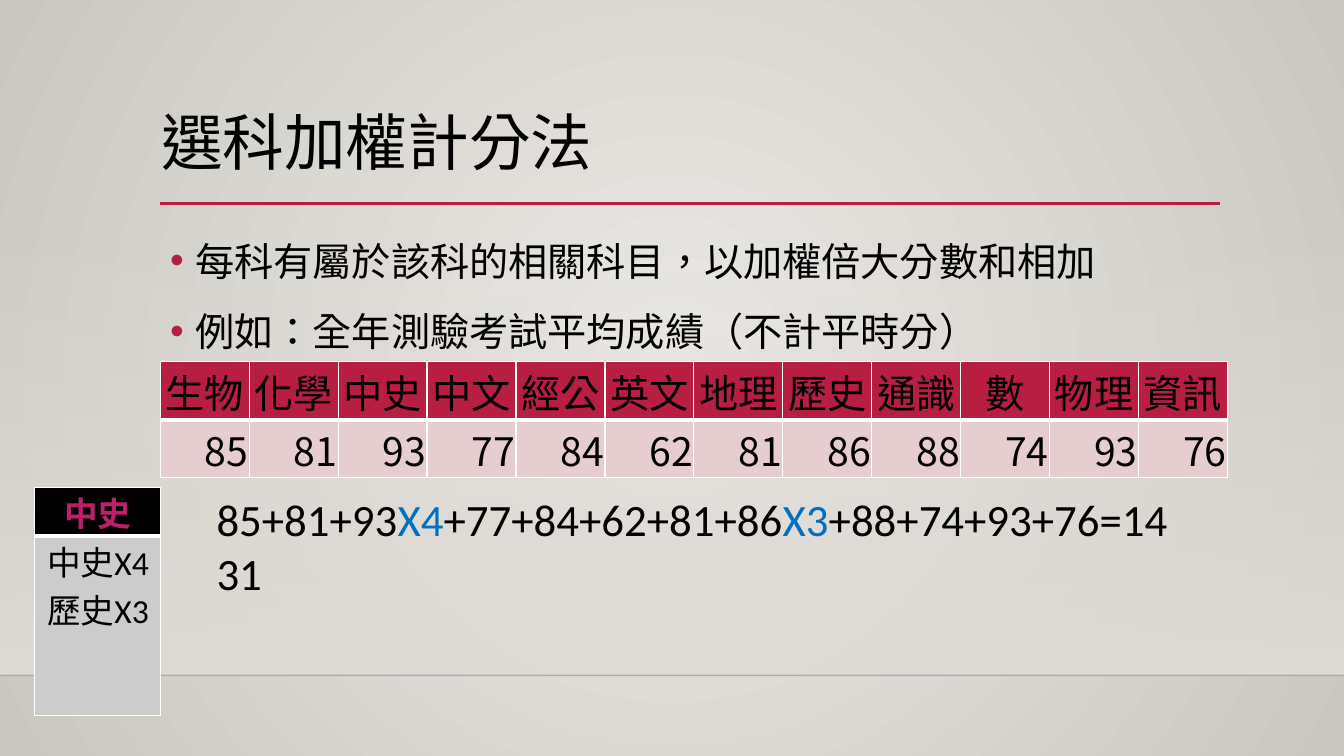
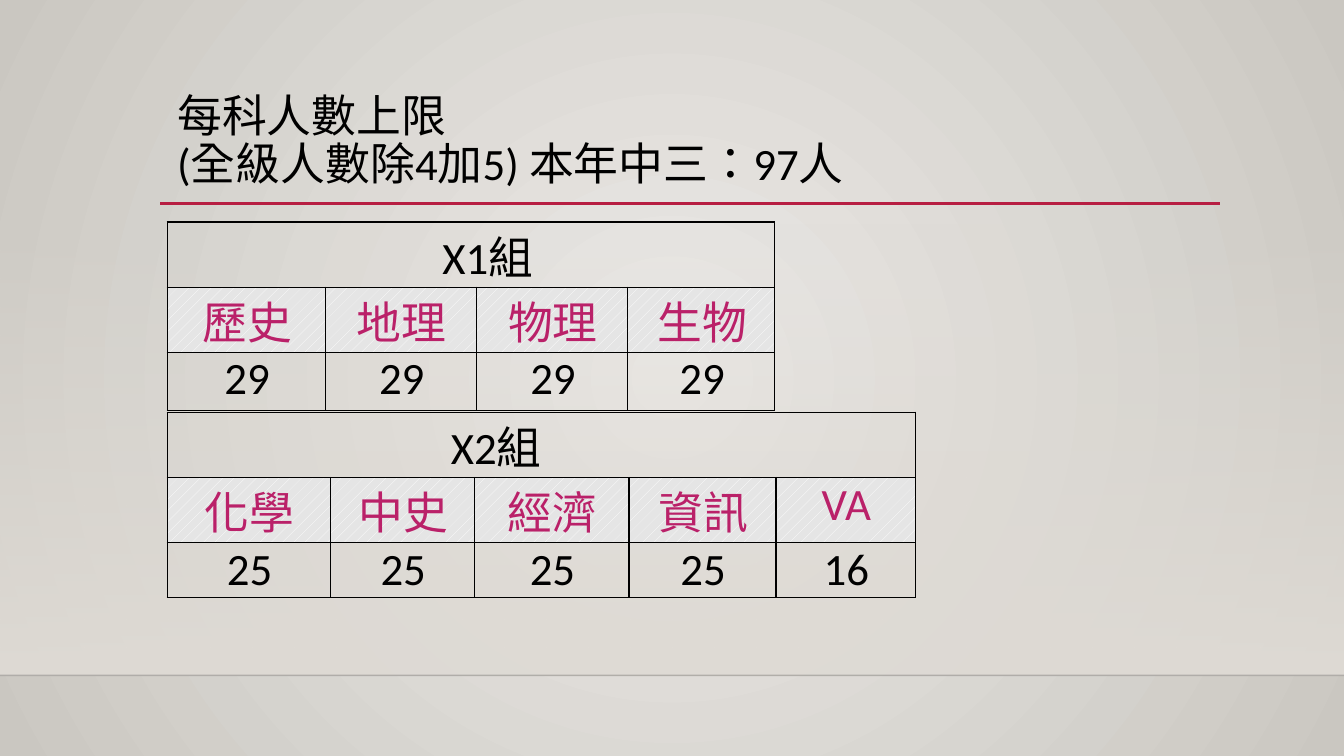
import pptx
import pptx.dml.color
import pptx.enum.dml
import pptx.enum.shapes
import pptx.enum.text
import pptx.oxml.ns
import pptx.util
from lxml import etree

Pt = pptx.util.Pt
qn = pptx.oxml.ns.qn
rgb = pptx.dml.color.RGBColor.from_string
LEFT, CENTER, RIGHT = (getattr(pptx.enum.text.PP_ALIGN, name) for name in ("LEFT", "CENTER", "RIGHT"))
LATIN, CJK = "Calibri", "Noto Sans CJK TC"
BLACK, WHITE, RED, PINK, BLUE = "000000", "FFFFFF", "B71E42", "BA2169", "0070C0"
BAND = "DFDBD5"


def write_text(frame, paragraphs, size=32, color=BLACK, font=LATIN, east=LATIN, bold=False,
               align=LEFT, indent=0, spacing=None, before=0, bullet=None):
    """Fill a frame; a paragraph is a string or a list of (text, colour) spans."""
    frame.word_wrap = True
    for index, spans in enumerate(paragraphs):
        para = frame.add_paragraph() if index else frame.paragraphs[0]
        properties = para._p.get_or_add_pPr()
        properties.set("marL", str(Pt(indent)))
        if bullet:
            properties.set("indent", str(-Pt(indent)))
            tint = etree.SubElement(properties, qn("a:buClr"))
            etree.SubElement(tint, qn("a:srgbClr"), val=RED)
            etree.SubElement(properties, qn("a:buFont"), typeface="Arial")
            etree.SubElement(properties, qn("a:buChar"), char=bullet)
        para.alignment = align
        if spacing:
            para.line_spacing = spacing
        if index and before:
            para.space_before = Pt(before)
        for text, tone in [(spans, color)] if isinstance(spans, str) else spans:
            span = para.add_run()
            span.text = text
            span.font.size, span.font.bold, span.font.name = Pt(size), bold, font
            span.font.color.rgb = rgb(tone)
            span._r.get_or_add_rPr().set("lang", "zh-TW")
            etree.SubElement(span._r.get_or_add_rPr(), qn("a:ea"), typeface=east)


def add_grid(page, left, top, widths, rows, border, inset=(6, 0), merge_first=False):
    """Add a table; each row is (cell texts, height, fill, bottom border width, text format)."""
    table = page.shapes.add_table(len(rows), len(widths), Pt(left), Pt(top),
                                  Pt(sum(widths)), Pt(sum(row[1] for row in rows))).table
    table.first_row = table.horz_banding = False
    for column, width in zip(table.columns, widths):
        column.width = Pt(width)
    if merge_first:
        table.cell(0, 0).merge(table.cell(0, len(widths) - 1))
    for r, (texts, height, fill, bottom, style) in enumerate(rows):
        table.rows[r].height = Pt(height)
        for c in range(len(widths)):
            cell = table.cell(r, c)
            cell.margin_left = cell.margin_right = Pt(inset[0])
            cell.margin_top, cell.margin_bottom = Pt(inset[1]), 0
            if fill == "pattern":
                cell.fill.patterned()
                cell.fill.pattern = pptx.enum.dml.MSO_PATTERN.PERCENT_10
                cell.fill.fore_color.rgb, cell.fill.back_color.rgb = rgb(WHITE), rgb("E5E5E5")
            elif fill:
                cell.fill.solid()
                cell.fill.fore_color.rgb = rgb(fill)
            else:
                cell.fill.background()
            for place, side in enumerate(("lnL", "lnR", "lnT", "lnB")):
                weight = bottom if side == "lnB" else 1
                edge = etree.Element(qn("a:" + side), w=str(Pt(weight)))
                paint = etree.SubElement(edge, qn("a:solidFill"))
                etree.SubElement(paint, qn("a:srgbClr"), val=border)
                cell._tc.get_or_add_tcPr().insert(place, edge)
            if c < len(texts):
                if style.get("font") == CJK:
                    cell.vertical_anchor = pptx.enum.text.MSO_ANCHOR.BOTTOM
                write_text(cell.text_frame, texts[c].split("\n"), **{"east": CJK, **style})


deck = pptx.Presentation()
deck.slide_width, deck.slide_height = Pt(960), Pt(540)

# Shared background: a radial gradient on the master
backdrop = deck.slide_master.background.fill
backdrop.gradient()
for stop, tone in zip(backdrop.gradient_stops, ("ECEAE7", "CAC7C1")):
    stop.color.rgb = rgb(tone)
gradient = deck.slide_master._element.find(".//" + qn("a:gradFill"))
gradient.remove(gradient.find(qn("a:lin")))
radial = etree.SubElement(gradient, qn("a:path"), {"path": "circle"})
etree.SubElement(radial, qn("a:fillToRect"), dict.fromkeys("ltrb", "50000"))

# Shared band, floor line, title rule and title on every page
titles = [
    (["選科加權計分法"], 44, (108, 76.3, 756, 82.8)),
    (["每科人數上限", "(全級人數除4加5) 本年中三：97人"], 32, (119.5, 63.4, 611.3, 82.8)),
]
pages = []
for lines, size, area in titles:
    page = deck.slides.add_slide(deck.slide_layouts[6])
    pages.append(page)
    band = page.shapes.add_shape(pptx.enum.shapes.MSO_SHAPE.RECTANGLE, 0, Pt(159), Pt(960), Pt(323.4))
    band.shadow.inherit = False
    band.line.fill.background()
    band.fill.gradient()
    band.fill.gradient_angle = 270
    for stop in band.fill.gradient_stops:
        stop.color.rgb = rgb(BAND)
    clear = band._element.spPr.find(".//" + qn("a:srgbClr"))
    etree.SubElement(clear, qn("a:alpha"), val="0")

    for start, end, height, tone, weight, alpha in ((0, 960, 482.4, "000001", 1, 20),
                                                    (114.5, 871.2, 145.4, RED, 2.5, 100)):
        rule = page.shapes.add_connector(pptx.enum.shapes.MSO_CONNECTOR.STRAIGHT,
                                         Pt(start), Pt(height), Pt(end), Pt(height))
        rule.line.color.rgb, rule.line.width = rgb(tone), Pt(weight)
        ink = rule._element.spPr.find(".//" + qn("a:srgbClr"))
        etree.SubElement(ink, qn("a:alpha"), val=str(alpha * 1000))
        etree.SubElement(rule._element.spPr, qn("a:effectLst"))

    box = page.shapes.add_textbox(*map(Pt, area))
    write_text(box.text_frame, lines, size=size, spacing=0.9)

weighting, limits = pages

# Weighting page: explanation
box = weighting.shapes.add_textbox(Pt(114.5), Pt(159), Pt(756), Pt(271.4))
write_text(box.text_frame, ["每科有屬於該科的相關科目，以加權倍大分數和相加", "例如：全年測驗考試平均成績（不計平時分）"],
           size=28, indent=18, spacing=1.2, before=10, bullet="•")

# Weighting page: scores by subject
subjects = "生物 化學 中史 中文 經公 英文 地理 歷史 通識 數 物理 資訊".split()
scores = "85 81 93 77 84 62 81 86 88 74 93 76".split()
score_style = dict(size=28, font=CJK)
add_grid(weighting, 114.5, 258.5, [63.54] * len(subjects), [
    (subjects, 41.3, RED, 3, dict(score_style, align=CENTER)),
    (scores, 41.3, "E6CDCF", 1, dict(score_style, align=RIGHT)),
], WHITE, inset=(0.7, 0.7))

# Weighting page: weights for one subject
weight_style = dict(size=24, align=CENTER, indent=1)
add_grid(weighting, 24.5, 348.2, [90], [
    (["中史"], 34.8, BLACK, 3, dict(weight_style, color=PINK, bold=True)),
    (["中史X4\n歷史X3"], 128, "CCCCCC", 1, weight_style),
], WHITE)

# Weighting page: worked sum
box = weighting.shapes.add_textbox(Pt(147.6), Pt(347.8), Pt(696.2), Pt(85))
write_text(box.text_frame, [[("85+81+93", BLACK), ("X4", BLUE), ("+77+84+62+81+86", BLACK),
                             ("X3", BLUE), ("+88+74+93+76=1431", BLACK)]])

# Limits page: places in each subject group
groups = [
    (158.6, 41.4, "X1組", dict(align=CENTER, indent=24), [113, 108, 108, 105],
     "歷史 地理 物理 生物", "29 29 29 29"),
    (294.5, 39.3, "X2組", dict(indent=196.5), [116.6, 103, 110.2, 105.1, 99.4],
     "化學 中史 經濟 資訊 VA", "25 25 25 25 16"),
]
for top, last_height, group, heading_style, widths, names, places in groups:
    add_grid(limits, 119.5, top, widths, [
        ([group], 46.5, None, 1, heading_style),
        (names.split(), 46.5, "pattern", 1, dict(align=CENTER, indent=1, color=PINK)),
        (places.split(), last_height, None, 1, dict(align=CENTER, indent=1)),
    ], BLACK, merge_first=True)

deck.save("out.pptx")
